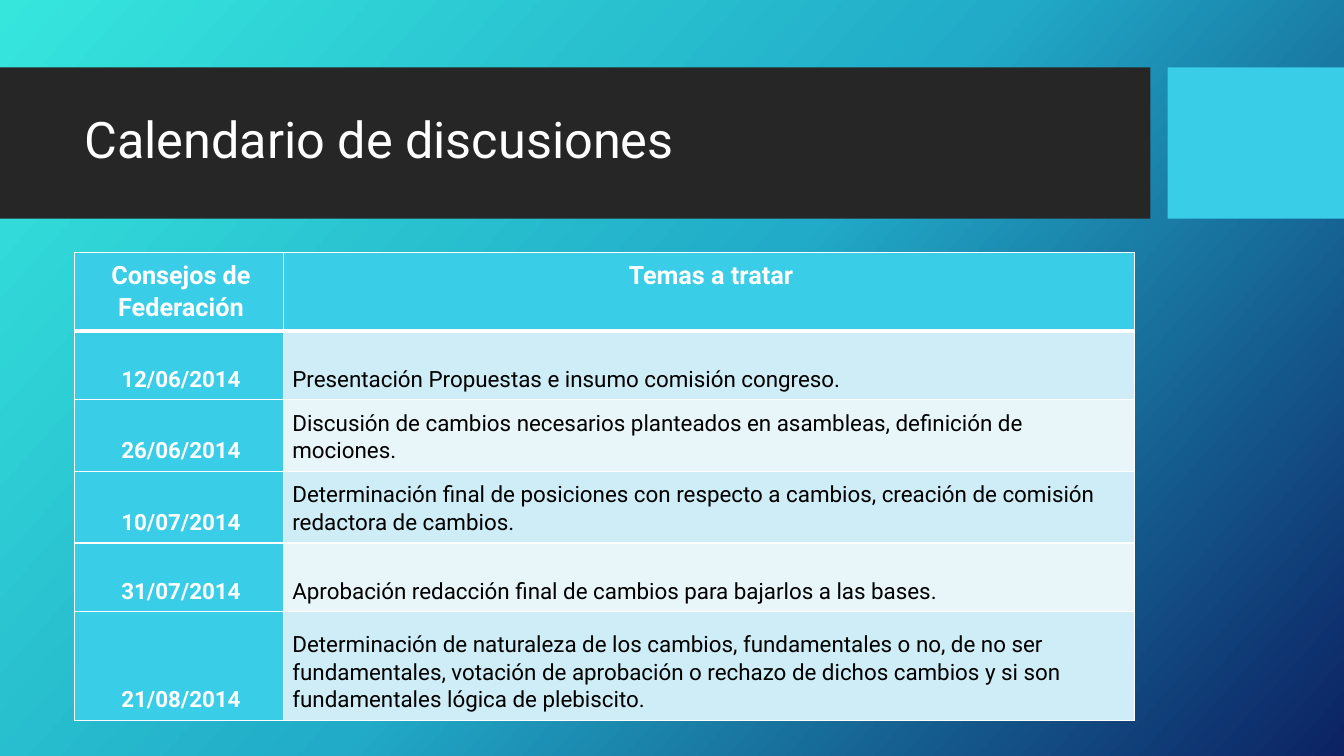
"""Build a slide with a title band and a table of dated council topics."""
from copy import deepcopy
from dataclasses import dataclass

from lxml import etree
from pptx import Presentation
from pptx.dml.color import RGBColor
from pptx.enum.shapes import MSO_SHAPE
from pptx.enum.text import MSO_ANCHOR, PP_ALIGN
from pptx.oxml.ns import qn
from pptx.util import Inches, Pt

RECT = MSO_SHAPE.RECTANGLE
TOP, MID, LOW = MSO_ANCHOR.TOP, MSO_ANCHOR.MIDDLE, MSO_ANCHOR.BOTTOM
LEFT, MIDST = PP_ALIGN.LEFT, PP_ALIGN.CENTER
WIDE, HIGH = Inches(13.33), Inches(7.5)
FONT, WHITE, BLACK, DARK, CYAN = "Roboto", "FFFFFF", "000000", "262626", "39CDE7"
BANDS = ("CEEDF6", "E8F6FA")
SKY = ((0, "36E6DD"), (0.5, "21ABC8"), (1, "0C2263"))
COLS = (15.53, 63.32)
ROWS = (9.33, 9.07, 9.07, 9.07, 9.07, 14.4)
HEAD = ("Consejos de Federación", "Temas a tratar")
TOPICS = (
    ("12/06/2014", "Presentación Propuestas e insumo comisión congreso."),
    ("26/06/2014", "Discusión de cambios necesarios planteados en asambleas, "
     "definición de mociones."),
    ("10/07/2014", "Determinación final de posiciones con respecto a cambios, "
     "creación de comisión redactora de cambios."),
    ("31/07/2014", "Aprobación redacción final de cambios para bajarlos a las bases."),
    ("21/08/2014", "Determinación de naturaleza de los cambios, fundamentales o no, "
     "de no ser fundamentales, votación de aprobación o rechazo de dichos cambios "
     "y si son fundamentales lógica de plebiscito."),
)


@dataclass(frozen=True)
class Box:
    left: float
    top: float
    width: float
    height: float

    def place(self) -> tuple[int, int, int, int]:
        return (across(self.left), down(self.top),
                across(self.width), down(self.height))


@dataclass(frozen=True)
class Block:
    box: Box
    fill: str


@dataclass(frozen=True)
class Style:
    size: int
    ink: str
    bold: bool
    align: PP_ALIGN
    anchor: MSO_ANCHOR
    space: float


BLOCKS = (Block(Box(0, 8.93, 85.6, 20), DARK),
          Block(Box(86.87, 8.93, 13.13, 20), CYAN))
TITLE = Box(5.55, 10.93, 78.84, 15.73)
GRID = Box(5.55, 33.4, sum(COLS), sum(ROWS))
NAME = Style(36, WHITE, False, LEFT, MID, 0.9)
LABEL = Style(18, WHITE, True, MIDST, TOP, 1.07)
DATE = Style(16, WHITE, True, MIDST, LOW, 1.07)
TOPIC = Style(16, BLACK, False, LEFT, LOW, 1.07)


def across(share: float) -> int:
    return round(WIDE * share / 100)


def down(share: float) -> int:
    return round(HIGH * share / 100)


def tint(code: str) -> RGBColor:
    return RGBColor.from_string(code)


def apply(item, values: dict) -> None:
    for key, value in values.items():
        setattr(item, key, value)


def write(frame, text: str, style: Style) -> None:
    para = frame.paragraphs[0]
    apply(para, {"alignment": style.align, "line_spacing": style.space})
    run = para.add_run()
    run.text = text
    apply(run.font, {"name": FONT, "size": Pt(style.size), "bold": style.bold})
    run.font.color.rgb = tint(style.ink)


def paint_sky(slide) -> None:
    fill = slide.background.fill
    fill.gradient()
    fill.gradient_angle = 318
    stops = next(slide.element.iter(qn("a:gsLst")))
    stops.insert(1, deepcopy(stops[0]))
    for stop, (spot, code) in zip(fill.gradient_stops, SKY):
        stop.position = spot
        stop.color.rgb = tint(code)


def draw_block(slide, block: Block) -> None:
    shape = slide.shapes.add_shape(RECT, *block.box.place())
    shape.shadow.inherit = False
    shape.fill.solid()
    shape.fill.fore_color.rgb = tint(block.fill)
    shape.line.fill.background()


def draw_title(slide, text: str) -> None:
    frame = slide.shapes.add_textbox(*TITLE.place()).text_frame
    apply(frame, {"word_wrap": True, "vertical_anchor": NAME.anchor})
    write(frame, text, NAME)


def edge(cell, row: int) -> None:
    props = cell._tc.get_or_add_tcPr()
    thick = {"L": 1, "R": 1, "T": 3 if row == 1 else 1, "B": 3 if row == 0 else 1}
    for spot, (side, width) in enumerate(thick.items()):
        line = etree.Element(qn(f"a:ln{side}"), w=str(Pt(width)))
        fill = etree.SubElement(line, qn("a:solidFill"))
        etree.SubElement(fill, qn("a:srgbClr"), val=WHITE)
        props.insert(spot, line)


def fill_cell(cell, row: int, text: str, style: Style, fill: str) -> None:
    apply(cell, {"margin_left": Inches(0.05), "margin_right": Inches(0.05),
                 "margin_top": Inches(0.07), "margin_bottom": Inches(0.07),
                 "vertical_anchor": style.anchor})
    cell.fill.solid()
    cell.fill.fore_color.rgb = tint(fill)
    edge(cell, row)
    write(cell.text_frame, text, style)
    props = cell.text_frame.paragraphs[0]._p.get_or_add_pPr()
    props.set("marL", str(Inches(0.04)))
    props.set("indent", "0")


def draw_table(slide) -> None:
    table = slide.shapes.add_table(len(ROWS), len(COLS), *GRID.place()).table
    for col, share in zip(table.columns, COLS):
        col.width = across(share)
    for row, share in zip(table.rows, ROWS):
        row.height = down(share)
    for col, text in enumerate(HEAD):
        fill_cell(table.cell(0, col), 0, text, LABEL, CYAN)
    for row, (date, topic) in enumerate(TOPICS, 1):
        fill_cell(table.cell(row, 0), row, date, DATE, CYAN)
        fill_cell(table.cell(row, 1), row, topic, TOPIC, BANDS[(row - 1) % 2])


def main() -> None:
    deck = Presentation()
    apply(deck, {"slide_width": WIDE, "slide_height": HIGH})
    slide = deck.slides.add_slide(deck.slide_layouts[6])
    paint_sky(slide)
    for block in BLOCKS:
        draw_block(slide, block)
    draw_title(slide, "Calendario de discusiones")
    draw_table(slide)
    deck.save("out.pptx")


if __name__ == "__main__":
    main()
